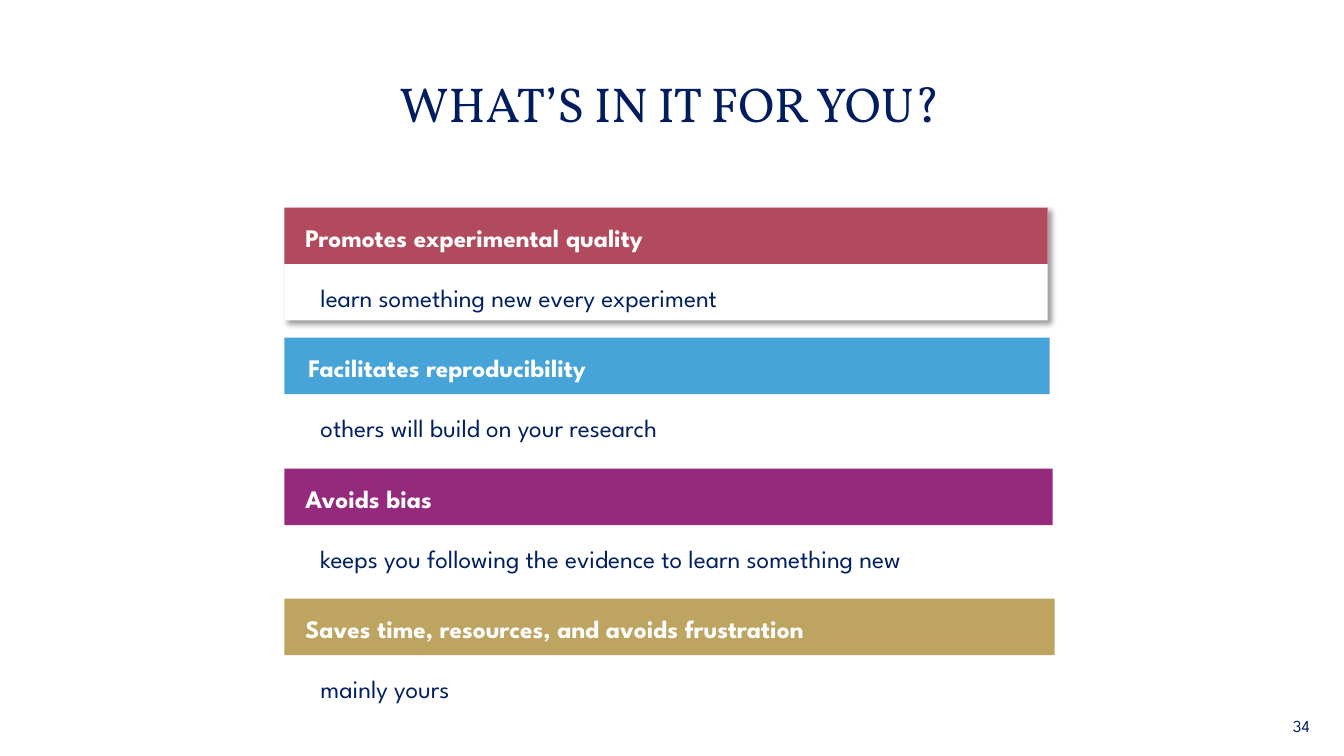
from dataclasses import dataclass

from lxml import etree
from pptx import Presentation
from pptx.dml.color import RGBColor
from pptx.enum.shapes import MSO_SHAPE as Shape
from pptx.enum.text import MSO_ANCHOR as Anchor, MSO_AUTO_SIZE as AutoSize, PP_ALIGN as Align
from pptx.oxml.ns import qn
from pptx.util import Pt

# Content: heading, detail, bar colour, card width, heading left and width, detail width
TITLE = "WHAT’S IN IT FOR YOU?"
PAGE_NUMBER = "34"
BENEFITS = [
    ("Promotes experimental quality", "learn something new every experiment", "B24A5D", 757, 293, 393, 505),
    ("Facilitates reproducibility", "others will build on your research", "47A4D9", 759, 296, 326, 418),
    ("Avoids bias", "keeps you following the evidence to learn something new", "952A7D", 762, 293, 161, 730),
    ("Saves time, resources, and avoids frustration", "mainly yours", "BDA461", 764, 293, 566, 170),
]


@dataclass(frozen=True)
class Theme:
    title_font: str = "Vollkorn"
    body_font: str = "League Spartan"
    title_color: str = "001D5F"
    text_color: str = "002060"
    white: str = "FFFFFF"
    title_size: int = 35
    body_size: int = 18
    number_size: int = 12


THEME = Theme()

# Layout in px, 100 px to the inch
PX = 9144
CARD_LEFT, FIRST_TOP, LAST_TOP = 282, 206, 594
CARD_HEIGHT, BAR_HEIGHT, TEXT_HEIGHT = 112, 56, 40
DETAIL_LEFT, HEADING_DROP, DETAIL_DROP = 308, 10, 69


def px(*lengths):
    return [length * PX for length in lengths]


def style(paragraph, font_name, size, color, bold=False):
    font = paragraph.font
    font.name, font.size, font.bold = font_name, Pt(size), bold
    font.color.rgb = RGBColor.from_string(color)


def add_rectangle(shapes, box, color):
    rectangle = shapes.add_shape(Shape.RECTANGLE, *px(*box))
    rectangle.fill.solid()
    rectangle.fill.fore_color.rgb = RGBColor.from_string(color)
    rectangle.line.fill.background()
    rectangle.shadow.inherit = False
    return rectangle


def add_text(shapes, box, text, color, bold=False):
    text_box = shapes.add_textbox(*px(*box))
    frame = text_box.text_frame
    frame.word_wrap = False
    frame.auto_size = AutoSize.SHAPE_TO_FIT_TEXT
    frame.text = text
    style(frame.paragraphs[0], THEME.body_font, THEME.body_size, color, bold)


def add_shadow(shape):
    effects = shape._element.spPr.find(qn("a:effectLst"))
    shadow = etree.SubElement(
        effects, qn("a:outerShdw"), blurRad=str(Pt(4)), dist=str(Pt(3)),
        dir=str(45 * 60000), algn="tl", rotWithShape="0")
    color = etree.SubElement(shadow, qn("a:srgbClr"), val="000000")
    etree.SubElement(color, qn("a:alpha"), val="40000")


def add_benefit(slide, index, benefit):
    heading, detail, color, width, heading_left, heading_width, detail_width = benefit
    top = FIRST_TOP + round(index * (LAST_TOP - FIRST_TOP) / (len(BENEFITS) - 1))
    shapes = slide.shapes.add_group_shape().shapes
    card = add_rectangle(shapes, (CARD_LEFT, top, width, CARD_HEIGHT), THEME.white)
    if index == 0:
        add_shadow(card)
    add_rectangle(shapes, (CARD_LEFT, top, width, BAR_HEIGHT), color)
    add_text(shapes, (heading_left, top + HEADING_DROP, heading_width, TEXT_HEIGHT),
             heading, THEME.white, bold=True)
    add_text(shapes, (DETAIL_LEFT, top + DETAIL_DROP, detail_width, TEXT_HEIGHT),
             detail, THEME.text_color)


def main():
    presentation = Presentation()
    presentation.slide_width, presentation.slide_height = px(1333, 750)
    slide = presentation.slides.add_slide(presentation.slide_layouts[5])

    # Title
    title = slide.shapes.title
    title.left, title.top, title.width, title.height = px(62, 45, 1205, 114)
    title.text_frame.text = TITLE
    title.text_frame.vertical_anchor = Anchor.MIDDLE
    title_line = title.text_frame.paragraphs[0]
    title_line.alignment = Align.CENTER
    style(title_line, THEME.title_font, THEME.title_size, THEME.title_color)

    # Benefit cards
    for index, benefit in enumerate(BENEFITS):
        add_benefit(slide, index, benefit)

    # Page number
    number = slide.shapes.add_textbox(*px(1076, 700, 233, 40)).text_frame
    number.word_wrap = True
    number.vertical_anchor = Anchor.MIDDLE
    number.text = PAGE_NUMBER
    number.paragraphs[0].alignment = Align.RIGHT
    style(number.paragraphs[0], THEME.body_font, THEME.number_size, THEME.text_color)

    presentation.save("out.pptx")


if __name__ == "__main__":
    main()
